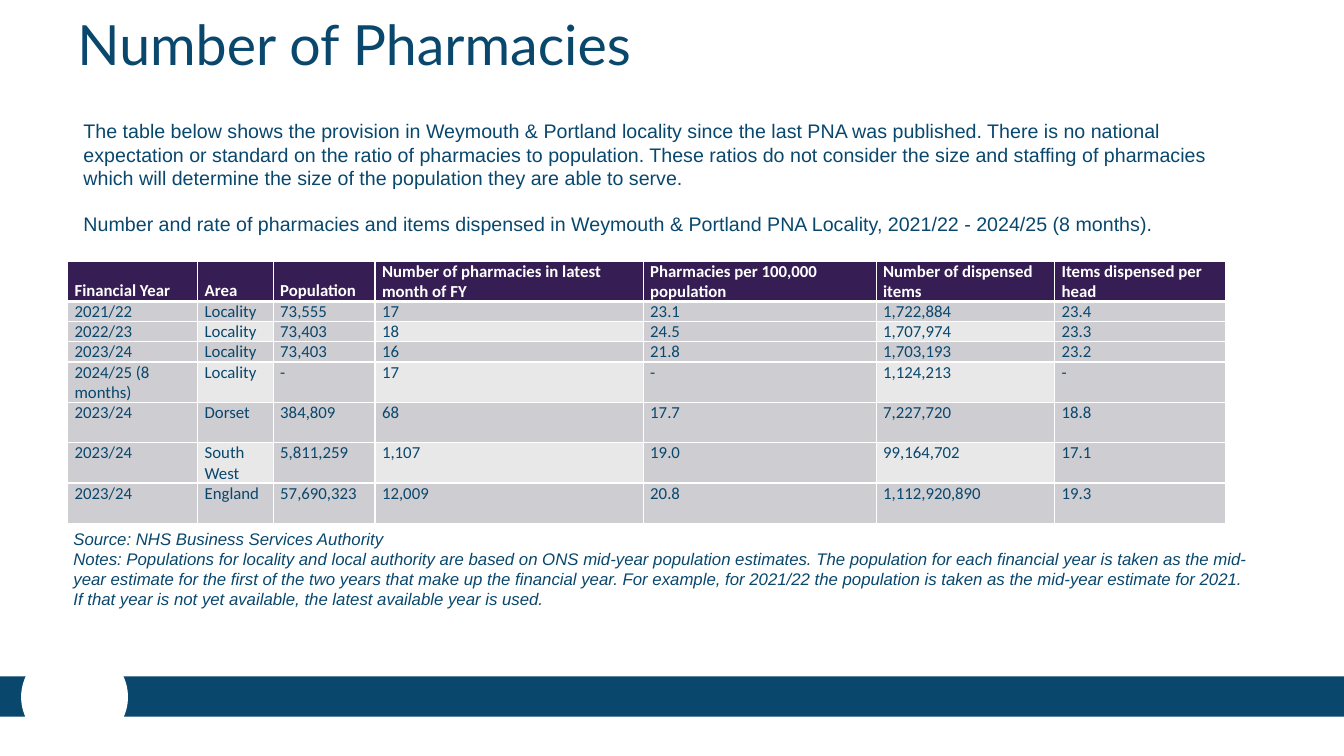
from dataclasses import dataclass

from lxml import etree
from pptx import Presentation
from pptx.dml.color import RGBColor
from pptx.enum.shapes import MSO_SHAPE
from pptx.enum.text import MSO_ANCHOR
from pptx.oxml.ns import qn
from pptx.util import Inches, Pt

RECTANGLE, OVAL = MSO_SHAPE.RECTANGLE, MSO_SHAPE.OVAL
TOP, MIDDLE, BOTTOM = MSO_ANCHOR.TOP, MSO_ANCHOR.MIDDLE, MSO_ANCHOR.BOTTOM


@dataclass(frozen=True)
class Theme:
    navy: str = "09476D"
    purple: str = "361E54"
    white: str = "FFFFFF"
    band_dark: str = "CECDD1"
    band_light: str = "E8E8E9"
    title_font: str = "Lato"
    body_font: str = "Arial"
    table_font: str = "Calibri"
    title_size: float = 39.6
    body_size: float = 14
    small_size: float = 12
    thin_rule: float = 1
    header_rule: float = 3


class SlideBuilder:
    def __init__(self, slide, theme):
        self.slide = slide
        self.theme = theme

    def shape(self, kind, left, top, width, height, color):
        shape = self.slide.shapes.add_shape(
            kind, Inches(left), Inches(top), Inches(width), Inches(height))
        shape.shadow.inherit = False
        shape.fill.solid()
        shape.fill.fore_color.rgb = RGBColor.from_string(color)
        shape.line.fill.background()

    def style(self, paragraph, font, size, color, bold=False, italic=False):
        for run in paragraph.runs:
            run.font.name = font
            run.font.size = Pt(size)
            run.font.bold = bold
            run.font.italic = italic
            run.font.color.rgb = RGBColor.from_string(color)

    def text(self, left, top, width, height, paragraphs, font, size,
             gap=0, line_spacing=None, italic=False):
        box = self.slide.shapes.add_textbox(
            Inches(left), Inches(top), Inches(width), Inches(height))
        frame = box.text_frame
        frame.word_wrap = True
        frame.vertical_anchor = MIDDLE
        frame.text = "\n".join(paragraphs)
        for index, paragraph in enumerate(frame.paragraphs):
            if index and gap:
                paragraph.space_before = Pt(gap)
            if line_spacing:
                paragraph.line_spacing = line_spacing
            self.style(paragraph, font, size, self.theme.navy, italic=italic)

    def borders(self, cell, top, bottom):
        thin = self.theme.thin_rule
        properties = cell._tc.get_or_add_tcPr()
        for side, width in (("L", thin), ("R", thin), ("T", top), ("B", bottom)):
            line = etree.SubElement(properties, qn(f"a:ln{side}"), w=str(Pt(width)))
            fill = etree.SubElement(line, qn("a:solidFill"))
            etree.SubElement(fill, qn("a:srgbClr"), val=self.theme.white)

    def table(self, left, top, column_widths, row_heights, rows):
        theme = self.theme
        table = self.slide.shapes.add_table(
            len(rows), len(column_widths), Inches(left), Inches(top),
            Inches(sum(column_widths)), Inches(sum(row_heights))).table
        for column, width in zip(table.columns, column_widths):
            column.width = Inches(width)
        for row, height in zip(table.rows, row_heights):
            row.height = Inches(height)
        for r, values in enumerate(rows):
            header = r == 0
            for c, value in enumerate(values):
                cell = table.cell(r, c)
                cell.margin_left = cell.margin_right = Inches(0.07)
                cell.margin_top = cell.margin_bottom = 0
                cell.vertical_anchor = BOTTOM if header else TOP
                self.borders(cell,
                             theme.header_rule if r == 1 else theme.thin_rule,
                             theme.header_rule if header else theme.thin_rule)
                # Light cells fall where an even row meets an odd column
                light = r % 2 == 0 and c % 2 == 1
                band = theme.band_light if light else theme.band_dark
                cell.fill.solid()
                cell.fill.fore_color.rgb = RGBColor.from_string(
                    theme.purple if header else band)
                cell.text_frame.text = value
                self.style(cell.text_frame.paragraphs[0], theme.table_font,
                           theme.small_size,
                           theme.white if header else theme.navy, bold=header)


INTRO = [
    "The table below shows the provision in Weymouth & Portland locality since "
    "the last PNA was published. There is no national expectation or standard on "
    "the ratio of pharmacies to population. These ratios do not consider the size "
    "and staffing of pharmacies which will determine the size of the population "
    "they are able to serve.",
    "Number and rate of pharmacies and items dispensed in Weymouth & Portland PNA "
    "Locality, 2021/22 - 2024/25 (8 months).",
]
NOTES = [
    "Source: NHS Business Services Authority",
    "Notes: Populations for locality and local authority are based on ONS mid-year "
    "population estimates. The population for each financial year is taken as the "
    "mid-year estimate for the first of the two years that make up the financial "
    "year. For example, for 2021/22 the population is taken as the mid-year "
    "estimate for 2021. If that year is not yet available, the latest available "
    "year is used.",
]
PHARMACY_ROWS = [
    ("Financial Year", "Area", "Population",
     "Number of pharmacies in latest month of FY",
     "Pharmacies per 100,000 population", "Number of dispensed items",
     "Items dispensed per head"),
    ("2021/22", "Locality", "73,555", "17", "23.1", "1,722,884", "23.4"),
    ("2022/23", "Locality", "73,403", "18", "24.5", "1,707,974", "23.3"),
    ("2023/24", "Locality", "73,403", "16", "21.8", "1,703,193", "23.2"),
    ("2024/25 (8 months)", "Locality", "-", "17", "-", "1,124,213", "-"),
    ("2023/24", "Dorset", "384,809", "68", "17.7", "7,227,720", "18.8"),
    ("2023/24", "South West", "5,811,259", "1,107", "19.0", "99,164,702", "17.1"),
    ("2023/24", "England", "57,690,323", "12,009", "20.8", "1,112,920,890", "19.3"),
]
COLUMN_WIDTHS = [1.29, 0.75, 1.01, 2.66, 2.31, 1.77, 1.7]
ROW_HEIGHTS = [0.4] + [0.2] * 3 + [0.4] * 4


def main():
    presentation = Presentation()
    presentation.slide_width = Inches(13.33)
    presentation.slide_height = Inches(7.5)
    theme = Theme()
    builder = SlideBuilder(
        presentation.slides.add_slide(presentation.slide_layouts[6]), theme)

    # Footer band with its round cut-out
    builder.shape(RECTANGLE, 0, 6.71, 13.33, 0.4, theme.navy)
    builder.shape(OVAL, 0.21, 6.41, 1.06, 1.01, theme.white)

    # Title, introduction and notes
    builder.text(0.67, 0.12, 8.5, 0.71, ["Number of Pharmacies"],
                 theme.title_font, theme.title_size, line_spacing=0.9)
    builder.text(0.73, 1.12, 11.87, 1.28, INTRO,
                 theme.body_font, theme.body_size, gap=16)
    builder.text(0.63, 5.19, 11.87, 0.91, NOTES,
                 theme.body_font, theme.small_size, italic=True)

    # Pharmacy provision table
    builder.table(0.67, 2.59, COLUMN_WIDTHS, ROW_HEIGHTS, PHARMACY_ROWS)

    presentation.save("out.pptx")


if __name__ == "__main__":
    main()
